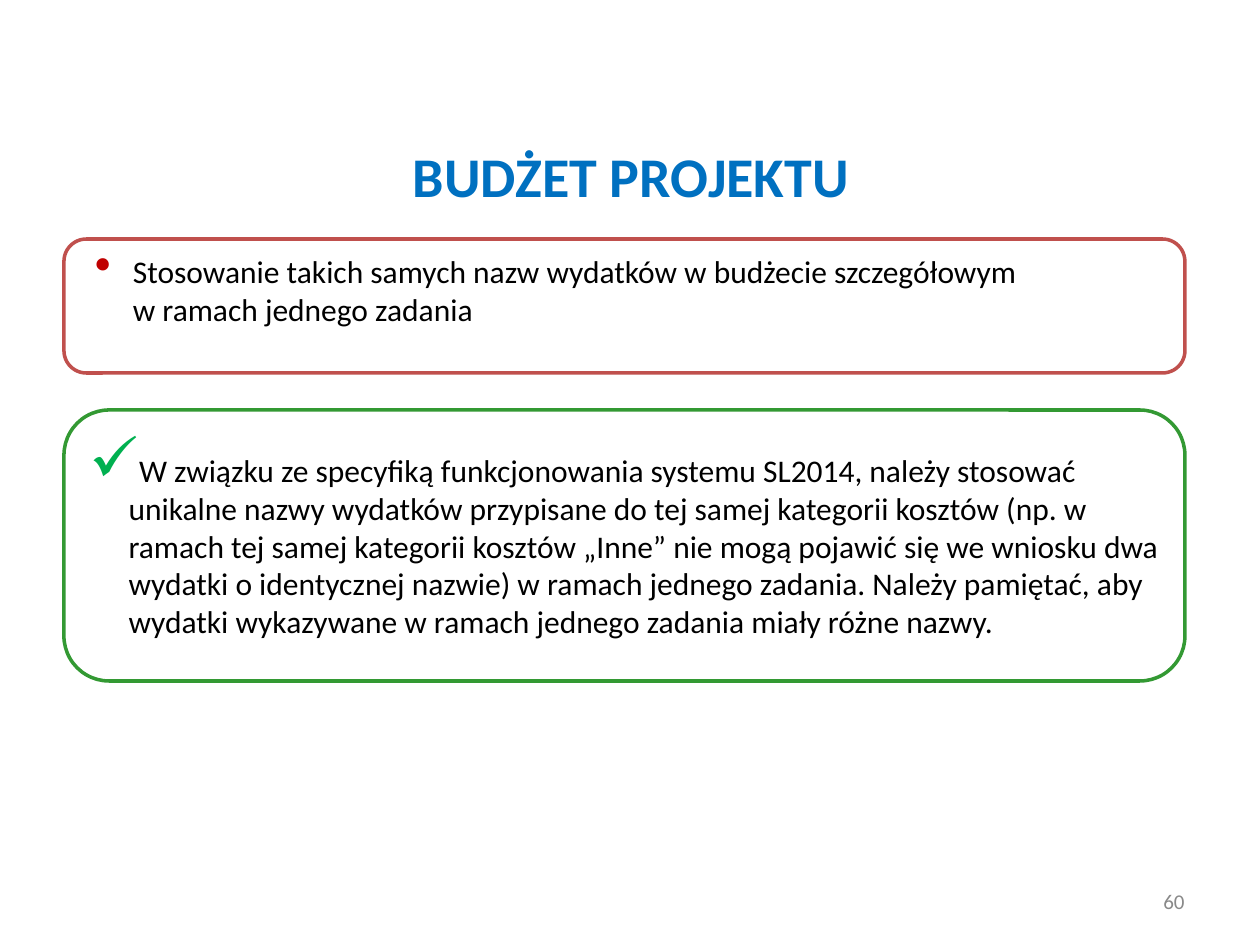
import dataclasses

import pptx
import pptx.dml.color
import pptx.enum.shapes
import pptx.enum.text
import pptx.util
from lxml import etree
from pptx.oxml import ns

ALIGN = pptx.enum.text.PP_ALIGN
ANCHOR = pptx.enum.text.MSO_ANCHOR
PX_PER_INCH = 126


def px(length):
    return pptx.util.Emu(round(length * pptx.util.Inches(1) / PX_PER_INCH))


@dataclasses.dataclass(frozen=True)
class Theme:
    font: str = "Calibri"
    heading: str = "0070C0"
    body: str = "000000"
    muted: str = "898989"
    problem_line: str = "C0504D"
    problem_mark: str = "C00000"
    advice_line: str = "339933"
    advice_mark: str = "00B050"
    title_size: int = 32
    body_size: int = 18
    number_size: int = 12
    line_width: int = 2


class SlideBuilder:
    def __init__(self, slide, theme):
        self.slide = slide
        self.theme = theme

    def set_text(self, frame, text, size, color, align, anchor, bold=False):
        frame.word_wrap = True
        frame.vertical_anchor = anchor
        paragraph = frame.paragraphs[0]
        paragraph.text = text
        paragraph.alignment = align
        for run in paragraph.runs:
            run.font.name = self.theme.font
            run.font.size = pptx.util.Pt(size)
            run.font.bold = bold
            run.font.color.rgb = pptx.dml.color.RGBColor.from_string(color)
        return paragraph

    def bullet(self, paragraph, char, color, percent, margin, indent):
        properties = paragraph._p.get_or_add_pPr()
        properties.set("marL", str(px(margin)))
        properties.set("indent", str(px(indent)))
        bullet_color = etree.SubElement(properties, ns.qn("a:buClr"))
        etree.SubElement(bullet_color, ns.qn("a:srgbClr"), val=color)
        etree.SubElement(properties, ns.qn("a:buSzPct"), val=str(percent * 1000))
        etree.SubElement(properties, ns.qn("a:buChar"), char=char)

    def title(self, text, left, top, width, height):
        heading = self.slide.shapes.title
        heading.left, heading.top = px(left), px(top)
        heading.width, heading.height = px(width), px(height)
        self.set_text(heading.text_frame, text, self.theme.title_size,
                      self.theme.heading, ALIGN.CENTER, ANCHOR.MIDDLE, bold=True)

    def panel(self, text, left, top, width, height, line, anchor):
        frame = self.slide.shapes.add_shape(
            pptx.enum.shapes.MSO_SHAPE.ROUNDED_RECTANGLE,
            px(left), px(top), px(width), px(height))
        frame.shadow.inherit = False
        frame.fill.background()
        frame.line.color.rgb = pptx.dml.color.RGBColor.from_string(line)
        frame.line.width = pptx.util.Pt(self.theme.line_width)
        return self.set_text(frame.text_frame, text, self.theme.body_size,
                             self.theme.body, ALIGN.LEFT, anchor)

    def page_number(self, text, left, top, width, height):
        number = self.slide.shapes.add_textbox(
            px(left), px(top), px(width), px(height))
        self.set_text(number.text_frame, text, self.theme.number_size,
                      self.theme.muted, ALIGN.RIGHT, ANCHOR.MIDDLE)


def main():
    deck = pptx.Presentation()
    deck.slide_width, deck.slide_height = px(1260), px(945)
    theme = Theme()
    builder = SlideBuilder(deck.slides.add_slide(deck.slide_layouts[5]), theme)
    left, panel_width = 64, 1121

    # Heading
    builder.title("BUDŻET PROJEKTU", left, 145, 1134, 60)

    # Common mistake
    mistake = builder.panel(
        "Stosowanie takich samych nazw wydatków w budżecie szczegółowym \n"
        "w ramach jednego zadania",
        left, 239, panel_width, 134, theme.problem_line, ANCHOR.TOP)
    builder.bullet(mistake, "•", theme.problem_mark, 150, 50, -38)

    # Recommended practice
    advice = builder.panel(
        "W związku ze specyfiką funkcjonowania systemu SL2014, należy stosować "
        "unikalne nazwy wydatków przypisane do tej samej kategorii kosztów "
        "(np. w ramach tej samej kategorii kosztów „Inne” nie mogą pojawić się "
        "we wniosku dwa wydatki o identycznej nazwie) w ramach jednego zadania. "
        "Należy pamiętać, aby wydatki wykazywane w ramach jednego zadania "
        "miały różne nazwy.",
        left, 410, panel_width, 271, theme.advice_line, ANCHOR.MIDDLE)
    builder.bullet(advice, "✓", theme.advice_mark, 200, 39, -39)

    # Page number
    builder.page_number("60", 903, 876, 294, 50)

    deck.save("out.pptx")


if __name__ == "__main__":
    main()
